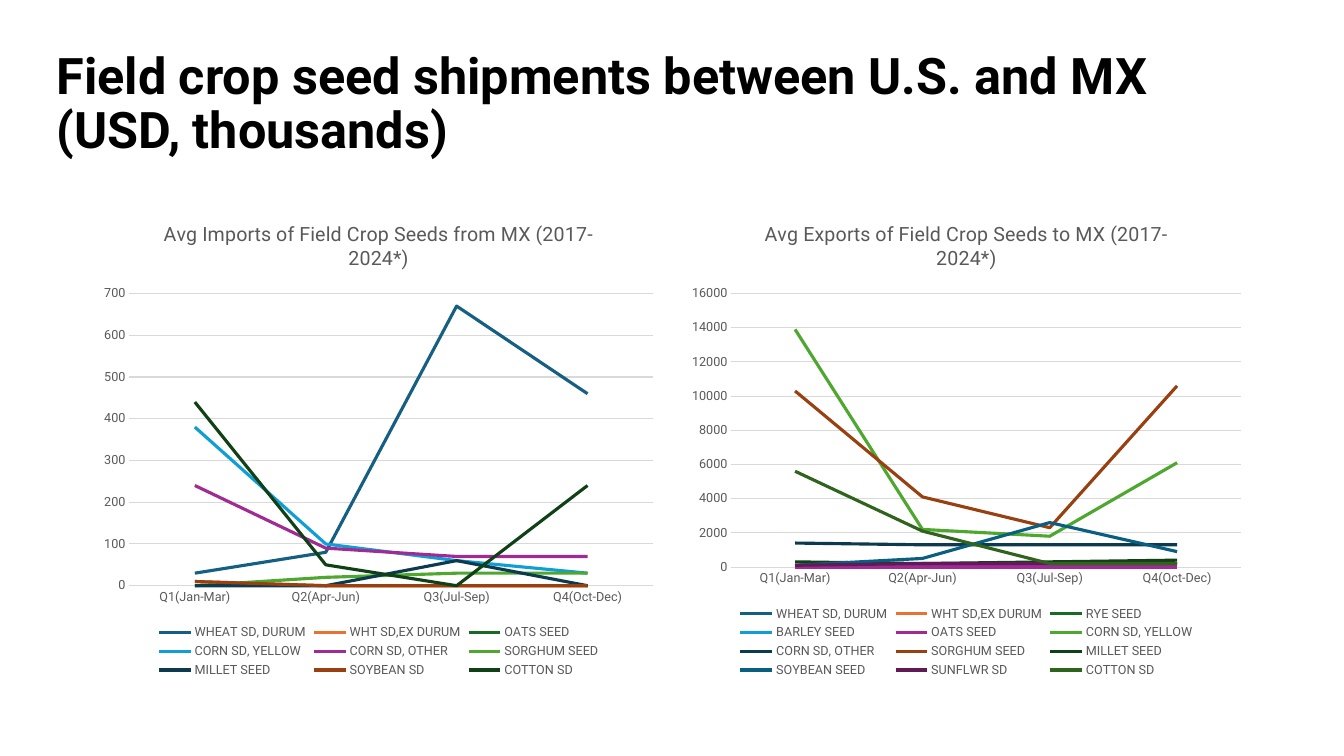
from dataclasses import dataclass

from pptx import Presentation
from pptx.chart.data import CategoryChartData
from pptx.dml.color import RGBColor
from pptx.enum.chart import XL_CHART_TYPE as ChartType
from pptx.enum.chart import XL_LEGEND_POSITION as LegendPosition
from pptx.enum.chart import XL_MARKER_STYLE as MarkerStyle
from pptx.enum.chart import XL_TICK_MARK as TickMark
from pptx.enum.text import MSO_ANCHOR, MSO_AUTO_SIZE, PP_ALIGN
from pptx.util import Inches, Pt


@dataclass(frozen=True)
class Theme:
    font: str = "Roboto"
    ink: str = "000000"
    muted: str = "595959"
    grid: str = "D9D9D9"
    title_size: float = 36
    chart_title_size: float = 14
    chart_size: float = 10
    label_size: float = 9
    series_width: float = 2.25
    grid_width: float = 0.75
    series_colors: tuple = (
        "156082", "E97132", "196B24", "0F9ED5", "A02B93", "4EA72E",
        "0D3A4E", "994010", "0F4016", "095F80", "601A58", "2F641C",
    )


THEME = Theme()
QUARTERS = ("Q1(Jan-Mar)", "Q2(Apr-Jun)", "Q3(Jul-Sep)", "Q4(Oct-Dec)")
IMPORTS = {
    "WHEAT SD, DURUM": (30, 80, 670, 460),
    "WHT SD,EX DURUM": (10, 0, 0, 0),
    "OATS SEED": (0, 0, 0, 0),
    "CORN SD, YELLOW": (380, 100, 60, 30),
    "CORN SD, OTHER": (240, 90, 70, 70),
    "SORGHUM SEED": (0, 20, 30, 30),
    "MILLET SEED": (0, 0, 60, 0),
    "SOYBEAN SD": (10, 0, 0, 0),
    "COTTON SD": (440, 50, 0, 240),
}
EXPORTS = {
    "WHEAT SD, DURUM": (0, 0, 0, 0),
    "WHT SD,EX DURUM": (0, 0, 0, 0),
    "RYE SEED": (0, 0, 0, 0),
    "BARLEY SEED": (0, 0, 0, 0),
    "OATS SEED": (0, 0, 0, 0),
    "CORN SD, YELLOW": (13900, 2200, 1800, 6100),
    "CORN SD, OTHER": (1400, 1300, 1300, 1300),
    "SORGHUM SEED": (10300, 4100, 2300, 10600),
    "MILLET SEED": (300, 200, 300, 400),
    "SOYBEAN SEED": (100, 500, 2600, 900),
    "SUNFLWR SD": (100, 200, 200, 200),
    "COTTON SD": (5600, 2100, 200, 200),
}


def style_font(font, size, color, bold=False):
    font.name = THEME.font
    font.size = Pt(size)
    font.bold = bold
    font.color.rgb = RGBColor.from_string(color)


def style_line(line, color, width):
    line.color.rgb = RGBColor.from_string(color)
    line.width = Pt(width)


def set_slide_title(page, text):
    title = page.shapes.title
    title.left, title.top = Inches(0.46), Inches(0.32)
    title.width, title.height = Inches(11.5), Inches(1.45)
    frame = title.text_frame
    frame.text = text
    frame.word_wrap = True
    frame.auto_size = MSO_AUTO_SIZE.NONE
    frame.vertical_anchor = MSO_ANCHOR.MIDDLE
    para = frame.paragraphs[0]
    para.alignment = PP_ALIGN.LEFT
    para.line_spacing = 0.9
    style_font(para.runs[0].font, THEME.title_size, THEME.ink, bold=True)


def style_axes(chart, maximum, step):
    for axis in (chart.category_axis, chart.value_axis):
        axis.major_tick_mark = TickMark.NONE
        axis.minor_tick_mark = TickMark.NONE
        style_font(axis.tick_labels.font, THEME.label_size, THEME.muted)
    style_line(chart.category_axis.format.line, THEME.grid, THEME.grid_width)
    values = chart.value_axis
    values.minimum_scale, values.maximum_scale = 0, maximum
    values.major_unit = step
    values.format.line.fill.background()
    values.has_major_gridlines = True
    style_line(values.major_gridlines.format.line, THEME.grid, THEME.grid_width)


def add_line_chart(page, left, title, shipments, maximum, step):
    data = CategoryChartData(number_format="0")
    data.categories = QUARTERS
    for crop, values in shipments.items():
        data.add_series(crop, values)
    chart = page.shapes.add_chart(
        ChartType.LINE, Inches(left), Inches(2), Inches(5.67), Inches(4.76), data
    ).chart
    style_font(chart.font, THEME.chart_size, THEME.ink)
    chart.has_title = True
    frame = chart.chart_title.text_frame
    frame.text = title
    style_font(frame.paragraphs[0].runs[0].font, THEME.chart_title_size, THEME.muted)
    chart.chart_title.include_in_layout = False
    chart.has_legend = True
    chart.legend.position = LegendPosition.BOTTOM
    chart.legend.include_in_layout = False
    style_font(chart.legend.font, THEME.label_size, THEME.muted)
    style_axes(chart, maximum, step)
    plot = chart.plots[0]
    plot.vary_by_categories = False
    for series, color in zip(plot.series, THEME.series_colors):
        series.smooth = False
        series.marker.style = MarkerStyle.NONE
        style_line(series.format.line, color, THEME.series_width)


def main():
    deck = Presentation()
    deck.slide_width, deck.slide_height = Inches(13.33), Inches(7.5)
    page = deck.slides.add_slide(deck.slide_layouts.get_by_name("Title Only"))
    set_slide_title(
        page, "Field crop seed shipments between U.S. and MX (USD, thousands)"
    )
    add_line_chart(
        page, 0.92, "Avg Imports of Field Crop Seeds from MX (2017-2024*)",
        IMPORTS, 700, 100,
    )
    add_line_chart(
        page, 6.75, "Avg Exports of Field Crop Seeds to MX (2017-2024*)",
        EXPORTS, 16000, 2000,
    )
    deck.save("out.pptx")


if __name__ == "__main__":
    main()
